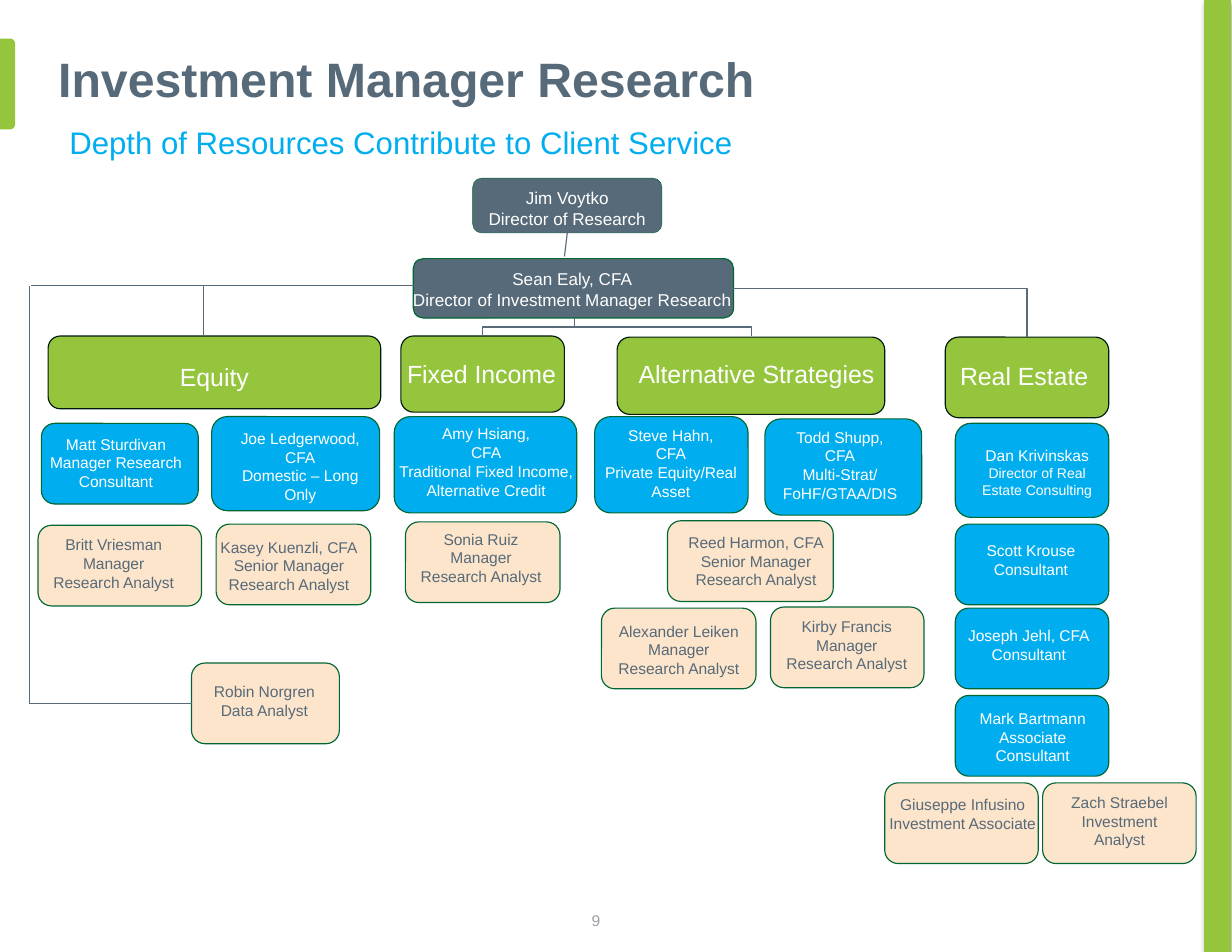
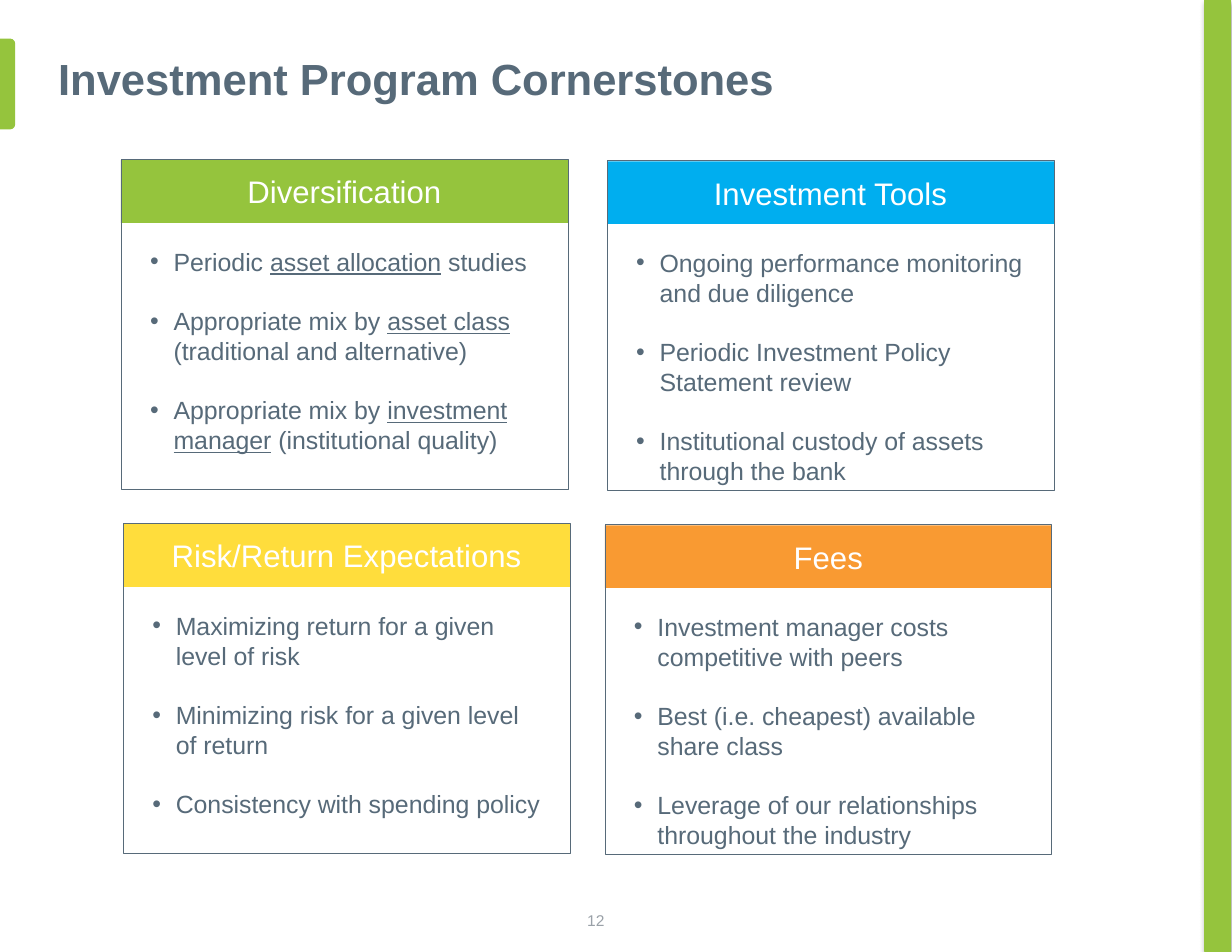
from lxml import etree
from pptx import Presentation
from pptx.dml.color import RGBColor
from pptx.enum.shapes import MSO_CONNECTOR, MSO_SHAPE
from pptx.enum.text import MSO_ANCHOR, PP_ALIGN
from pptx.oxml.ns import qn
from pptx.util import Inches, Pt

WHITE = RGBColor(0xFF, 0xFF, 0xFF)
SLATE = RGBColor(0x57, 0x6A, 0x79)
GRAY = RGBColor(0x9A, 0xA1, 0xA8)
GREEN = RGBColor(0x95, 0xC4, 0x3D)
BLUE = RGBColor(0x00, 0xAE, 0xEF)
YELLOW = RGBColor(0xFF, 0xDD, 0x3C)
ORANGE = RGBColor(0xF9, 0x9A, 0x32)
DARK_GREEN = RGBColor(0x00, 0x66, 0x33)
BLACK_GREEN = RGBColor(0x00, 0x1A, 0x0D)

FONT = "Arial"
WIDE_INSETS = (0.11, 0.06)
SMALL_INSETS = (0.1, 0.05)

# Each card: box, label area, lines of text
CONSULTANTS = [
    ((5.31, 3.72, 1.37, 0.86), (5.29, 3.75, 1.4, 0.75),
     ["Steve Hahn,", "CFA", "Private Equity/Real Asset"]),
    ((6.83, 3.74, 1.4, 0.86), (6.76, 3.77, 1.48, 0.67),
     ["Todd Shupp,", "CFA", "Multi-Strat/ FoHF/GTAA/DIS"]),
    ((3.52, 3.72, 1.63, 0.86), (3.39, 3.74, 1.9, 0.64),
     ["Amy Hsiang,", "CFA", "Traditional Fixed Income, Alternative Credit"]),
    ((1.89, 3.72, 1.5, 0.84), (1.97, 3.78, 1.42, 0.73),
     ["Joe Ledgerwood, CFA", "Domestic – Long Only"]),
    ((0.37, 3.78, 1.4, 0.72), (0.27, 3.83, 1.53, 0.52),
     ["Matt Sturdivan Manager Research Consultant"]),
    ((8.53, 4.68, 1.37, 0.72), (8.6, 4.78, 1.21, 0.51),
     ["Scott Krouse", "Consultant"]),
    ((8.53, 5.43, 1.37, 0.72), (8.54, 5.54, 1.29, 0.51),
     ["Joseph Jehl, CFA", "Consultant"]),
    ((8.53, 6.21, 1.37, 0.72), (8.54, 6.28, 1.36, 0.63),
     ["Mark Bartmann", "Associate", "Consultant"]),
]
ANALYSTS = [
    ((0.34, 4.69, 1.46, 0.72), (0.33, 4.73, 1.37, 0.63),
     ["Britt Vriesman", "Manager Research Analyst"]),
    ((1.93, 4.68, 1.38, 0.72), (1.83, 4.75, 1.5, 0.63),
     ["Kasey Kuenzli, CFA", "Senior Manager Research Analyst"]),
    ((3.62, 4.66, 1.38, 0.72), (3.58, 4.68, 1.43, 0.63),
     ["Sonia Ruiz", "Manager", "Research Analyst"]),
    ((5.96, 4.65, 1.48, 0.72), (6, 4.71, 1.5, 0.63),
     ["Reed Harmon, CFA", "Senior Manager Research Analyst"]),
    ((5.37, 5.43, 1.38, 0.72), (5.32, 5.5, 1.48, 0.63),
     ["Alexander Leiken", "Manager", "Research Analyst"]),
    ((6.88, 5.42, 1.37, 0.72), (6.89, 5.46, 1.34, 0.63),
     ["Kirby Francis", "Manager Research Analyst"]),
    ((7.9, 6.99, 1.37, 0.72), (7.83, 7.05, 1.53, 0.44),
     ["Giuseppe Infusino", "Investment Associate"]),
    ((9.31, 6.99, 1.37, 0.72), (9.32, 7.03, 1.35, 0.63),
     ["Zach Straebel", "Investment Analyst"]),
]
ASSET_CLASSES = [
    ((3.58, 3, 1.46, 0.68), (3.48, 3.14, 1.64, 0.38), ["Fixed Income"]),
    ((5.51, 3.01, 2.39, 0.69), (5.35, 3.14, 2.81, 0.38), ["Alternative Strategies"]),
    ((8.44, 3.01, 1.46, 0.72), (8.43, 3.16, 1.43, 0.38), ["Real Estate"]),
]
# Each cornerstone: left, top, colour, heading, bullets (underlined parts between _)
CORNERSTONES = [
    (1.08, 1.42, GREEN, "Diversification",
     ["Periodic _asset allocation_ studies",
      "Appropriate mix by _asset class_ (traditional and alternative)",
      "Appropriate mix by _investment manager_ (institutional quality)"]),
    (5.42, 1.43, BLUE, "Investment Tools",
     ["Ongoing performance monitoring and due diligence",
      "Periodic Investment Policy Statement review",
      "Institutional custody of assets through the bank"]),
    (1.1, 4.67, YELLOW, "Risk/Return Expectations",
     ["Maximizing return for a given level of risk",
      "Minimizing risk for a given level of return",
      "Consistency with spending policy"]),
    (5.4, 4.68, ORANGE, "Fees",
     ["Investment manager costs competitive with peers",
      "Best (i.e. cheapest) available share class",
      "Leverage of our relationships throughout the industry"]),
]


def inches(values):
    return [Inches(value) for value in values]


class Page:
    """The house style together with the slide being filled."""

    def __init__(self, deck, title, title_size, number):
        self.shapes = deck.slides.add_slide(deck.slide_layouts[6]).shapes
        band = self.shape((10.76, 0, 0.23, 8.5), GREEN, GREEN)
        self.soft_shadow(band)
        tab = self.shape((-0.34, 0.68, 0.81, 0.14), GREEN,
                         kind=MSO_SHAPE.ROUND_2_SAME_RECTANGLE)
        tab.adjustments[0] = 0.305
        tab.rotation = 90
        heading = self.text((0.41, 0.34, 10.2, 0.72), [title], title_size, SLATE,
                            align=PP_ALIGN.LEFT, anchor=MSO_ANCHOR.MIDDLE)
        heading.text_frame.paragraphs[0].runs[0].font.bold = True
        self.text((2.83, 8.07, 4.98, 0.29), [str(number)], 10, GRAY)

    def shape(self, area, fill=None, line=None, width=0.75, kind=MSO_SHAPE.RECTANGLE):
        box = self.shapes.add_shape(kind, *inches(area))
        box.shadow.inherit = False
        if fill is None:
            box.fill.background()
        else:
            box.fill.solid()
            box.fill.fore_color.rgb = fill
        if line is None:
            box.line.fill.background()
        else:
            box.line.color.rgb = line
            box.line.width = Pt(width)
        return box

    def soft_shadow(self, box):
        effects = box._element.spPr.find(qn("a:effectLst"))
        shadow = etree.SubElement(effects, qn("a:outerShdw"), blurRad=str(Pt(3.1)),
                                  dist=str(Pt(1.8)), dir="5400000", rotWithShape="0")
        color = etree.SubElement(shadow, qn("a:srgbClr"), val="000000")
        etree.SubElement(color, qn("a:alpha"), val="35000")

    def set_text(self, box, lines, size, color, align=PP_ALIGN.CENTER,
                 anchor=MSO_ANCHOR.TOP, insets=WIDE_INSETS):
        frame = box.text_frame
        frame.word_wrap = True
        frame.vertical_anchor = anchor
        frame.margin_left = frame.margin_right = Inches(insets[0])
        frame.margin_top = frame.margin_bottom = Inches(insets[1])
        frame.text = "\n".join(lines)
        for paragraph in frame.paragraphs:
            paragraph.alignment = align
            for span in paragraph.runs:
                self.style(span, size, color)

    def style(self, span, size, color):
        span.font.name = FONT
        span.font.size = Pt(size)
        span.font.color.rgb = color

    def text(self, area, lines, size, color, **layout):
        box = self.shapes.add_textbox(*inches(area))
        self.set_text(box, lines, size, color, **layout)
        return box

    def rounded(self, area, fill, line=DARK_GREEN, width=0.75):
        return self.shape(area, fill, line, width, MSO_SHAPE.ROUNDED_RECTANGLE)

    def card(self, area, label_area, lines, fill, color=WHITE, size=10,
             line=DARK_GREEN, insets=SMALL_INSETS):
        """Rounded box with a label that may reach past its sides."""
        box = self.rounded(area, fill, line)
        label = self.text(label_area, lines, size, color, insets=insets)
        return box, label

    def analyst(self, area, label_area, lines):
        box, _ = self.card(area, label_area, lines, ORANGE, SLATE)
        tint = box._element.spPr.find(qn("a:solidFill"))[0]
        etree.SubElement(tint, qn("a:alpha"), val="25000")
        return box

    def connector(self, start, end, kind=MSO_CONNECTOR.STRAIGHT):
        link = self.shapes.add_connector(kind, *inches(start + end))
        link.line.color.rgb = SLATE
        link.line.width = Pt(0.75)
        etree.SubElement(link._element.spPr, qn("a:effectLst"))
        return link

    def corner(self, start, end):
        """Connector that runs sideways, then down."""
        link = self.connector(start, end, MSO_CONNECTOR.ELBOW)
        link._element.spPr.find(qn("a:prstGeom")).set("prst", "bentConnector2")

    def branch(self, start, end):
        """Connector that runs down, sideways and down again."""
        middle_x, middle_y = (start[0] + end[0]) / 2, (start[1] + end[1]) / 2
        half_drop, half_reach = (end[1] - start[1]) / 2, abs(end[0] - start[0]) / 2
        link = self.connector((middle_x - half_drop, middle_y - half_reach),
                              (middle_x + half_drop, middle_y + half_reach),
                              MSO_CONNECTOR.ELBOW)
        frame = link._element.spPr.find(qn("a:xfrm"))
        if end[0] > start[0]:
            frame.set("rot", "16200000")
            frame.set("flipH", "1")
        else:
            frame.set("rot", "5400000")

    def bullets(self, area, items):
        box = self.text(area, [""] * len(items), 16, SLATE, align=PP_ALIGN.LEFT)
        for index, (paragraph, item) in enumerate(zip(box.text_frame.paragraphs, items)):
            properties = paragraph._p.get_or_add_pPr()
            properties.set("marL", str(Inches(0.21)))
            properties.set("indent", str(-Inches(0.21)))
            etree.SubElement(properties, qn("a:buFont"), typeface=FONT)
            etree.SubElement(properties, qn("a:buChar"), char="•")
            if index:
                paragraph.space_before = Pt(19)
            for part, words in enumerate(item.split("_")):
                span = paragraph.add_run()
                span.text = words
                self.style(span, 16, SLATE)
                if part % 2:
                    span.font.underline = True

    def cornerstone(self, left, top, color, heading, items):
        header = self.shape((left, top + 0.01, 3.99, 0.56), color)
        self.set_text(header, [heading], 20, WHITE, anchor=MSO_ANCHOR.MIDDLE)
        self.shape((left, top, 3.99, 2.95), line=SLATE, width=0.25)
        self.bullets((left + 0.15, top + 0.72, 3.72, 2.12), items)


def build_research_chart(deck):
    page = Page(deck, "Investment Manager Research", 31, 9)
    page.text((0.51, 1.04, 9.99, 0.46), ["Depth of Resources Contribute to Client Service"],
              20, BLUE, align=PP_ALIGN.LEFT)

    director = page.rounded((4.22, 1.59, 1.69, 0.49), SLATE, width=0.25)
    page.set_text(director, ["Jim Voytko", "Director of Research"], 11, WHITE)
    page.card((3.69, 2.31, 2.86, 0.53), (3.44, 2.34, 3.34, 0.5),
              ["Sean Ealy, CFA", "Director of Investment Manager Research"],
              SLATE, size=11, insets=WIDE_INSETS)

    equity = page.rounded((0.43, 3, 2.97, 0.65), GREEN, BLACK_GREEN)
    page.set_text(equity, ["Equity"], 16, WHITE)
    equity.text_frame.paragraphs[0].line_spacing = 1.5
    for area, label_area, lines in ASSET_CLASSES:
        page.card(area, label_area, lines, GREEN, size=16, line=BLACK_GREEN,
                  insets=WIDE_INSETS)

    for area, label_area, lines in CONSULTANTS:
        page.card(area, label_area, lines, BLUE)
    _, label = page.card((8.53, 3.78, 1.37, 0.84), (8.62, 3.93, 1.28, 0.48),
                         ["Dan Krivinskas", "Director of Real Estate Consulting"], BLUE)
    label.text_frame.paragraphs[1].runs[0].font.size = Pt(9)
    for area, label_area, lines in ANALYSTS:
        page.analyst(area, label_area, lines)
    data_analyst = page.analyst((1.71, 5.92, 1.32, 0.72), (1.67, 6.04, 1.38, 0.44),
                                ["Robin Norgren", "Data Analyst"])

    page.connector((5.06, 2.08), (5.04, 2.29)).begin_connect(director, 2)
    page.connector((0.26, 6.28), (1.71, 6.28)).end_connect(data_analyst, 1)
    page.connector((0.26, 6.28), (0.26, 2.55))
    page.connector((4.01, 2.55), (0.28, 2.55))
    page.connector((1.82, 2.55), (1.82, 3))
    page.branch((5.13, 2.84), (4.31, 3))
    page.branch((5.13, 2.84), (6.71, 3))
    page.corner((6.48, 2.58), (9.17, 3.01))


def build_cornerstones(deck):
    page = Page(deck, "Investment Program Cornerstones", 28, 12)
    for cornerstone in CORNERSTONES:
        page.cornerstone(*cornerstone)


def main():
    deck = Presentation()
    deck.slide_width, deck.slide_height = Inches(11), Inches(8.5)
    build_research_chart(deck)
    build_cornerstones(deck)
    deck.save("out.pptx")


if __name__ == "__main__":
    main()
